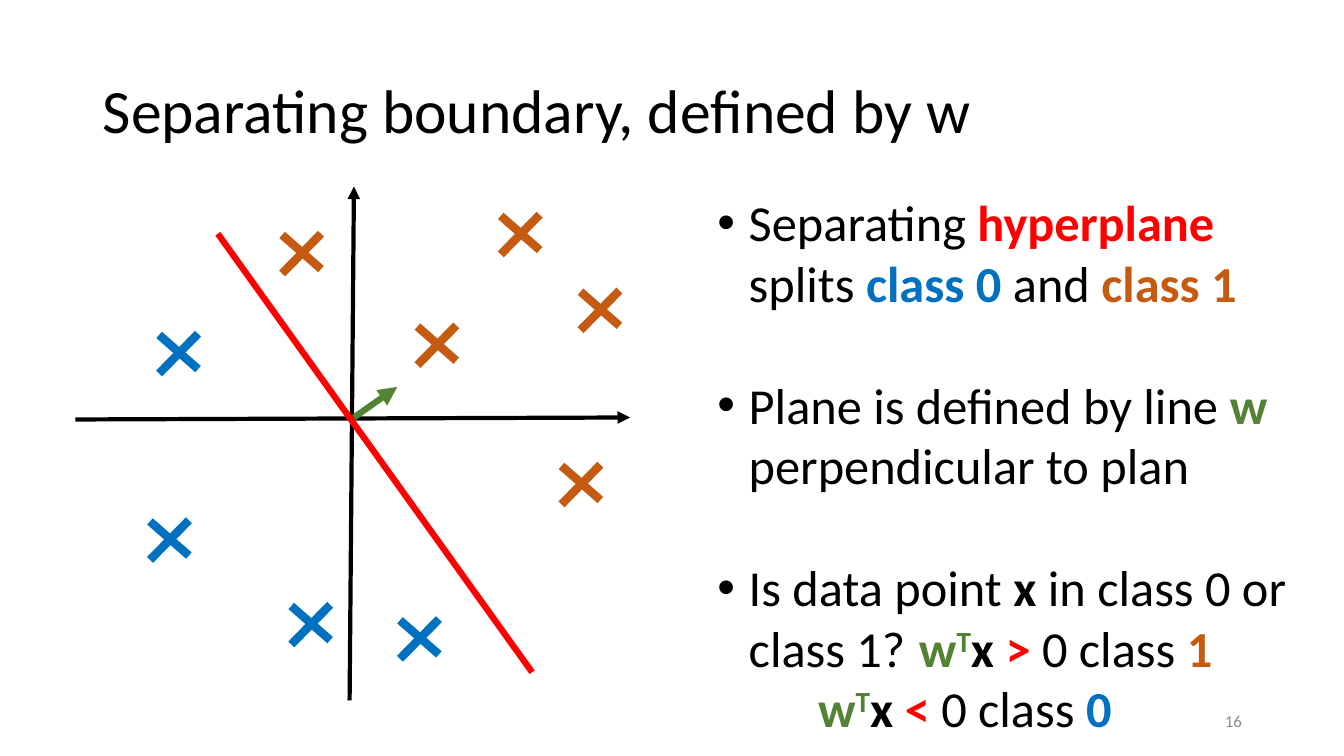
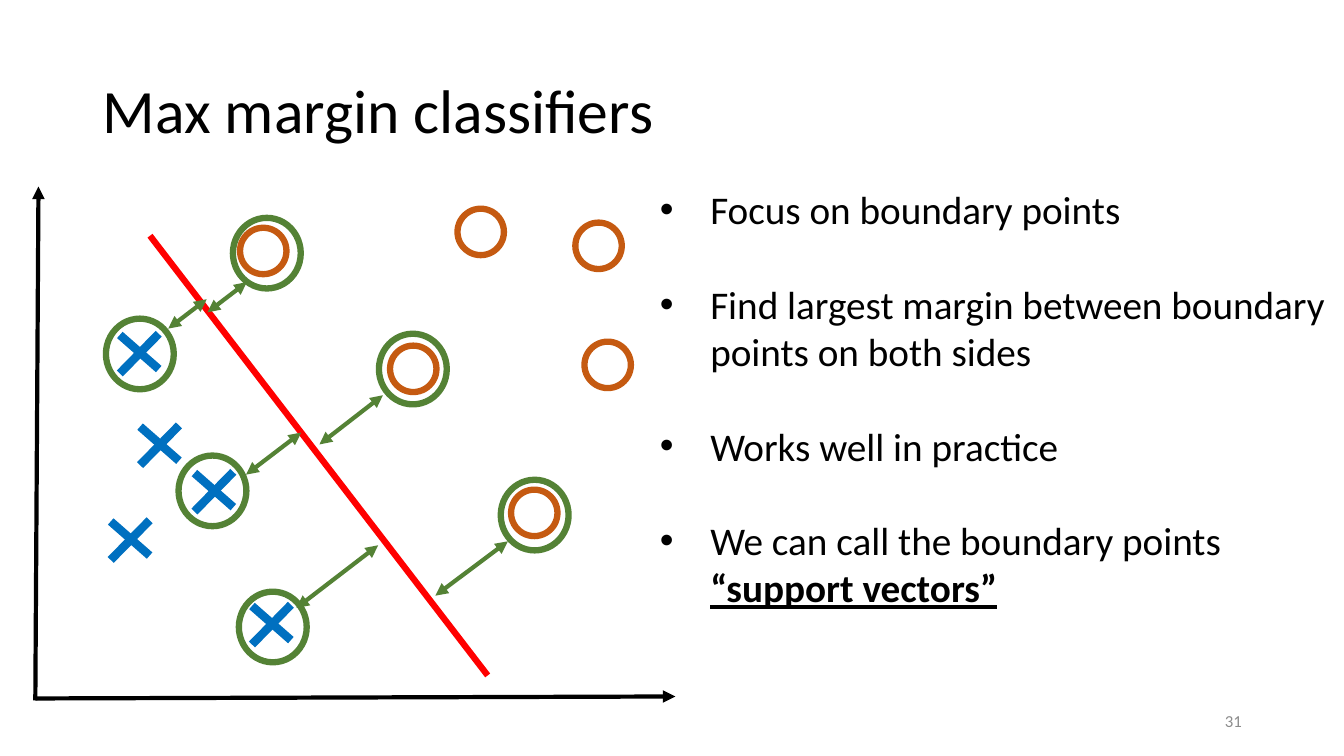
"""Build two slides on separating boundaries and max margin classifiers."""
from lxml.etree import SubElement
from pptx import Presentation
from pptx.dml.color import RGBColor
from pptx.enum.shapes import MSO_CONNECTOR as Connector, MSO_SHAPE as Shape
from pptx.enum.text import MSO_ANCHOR as Anchor, PP_ALIGN as Align
from pptx.oxml.ns import qn
from pptx.util import Cm, Pt

BLACK = RGBColor(0x00, 0x00, 0x00)
GREY = RGBColor(0x8C, 0x8C, 0x8C)
RED = RGBColor(0xFF, 0x00, 0x00)
BLUE = RGBColor(0x00, 0x70, 0xC0)
ORANGE = RGBColor(0xC5, 0x5A, 0x11)
GREEN = RGBColor(0x54, 0x82, 0x35)

FONT = "Calibri"
TITLE_BOX = (2.34, 1.02, 29.21, 3.68)
NUMBER_BOX = (23.93, 17.65, 7.62, 1.02)
HALO_SIZE = (1.71, 1.78)
RING_SIZE = (1.17, 1.17)
CROSS_STROKES = ((0, 0.03, 0.98, 0.89), (0, 1, 0.98, 0))
BREAK = "\n"
BOLD = {"bold": True}


def set_format(target, values):
    """Set each attribute of target named in values."""
    for name, value in values.items():
        setattr(target, name, value)


def add_words(paragraph, words, size, colour=BLACK, style=None, raised=False):
    """Add one run of text to a paragraph."""
    run = paragraph.add_run()
    run.text = words
    set_format(run.font, {"name": FONT, "size": Pt(size), **(style or {})})
    run.font.color.rgb = colour
    if raised:
        run.font._element.set("baseline", "30000")


def add_frame(slide, box, anchor):
    """Add a wrapping text box and return its text frame."""
    frame = slide.shapes.add_textbox(*map(Cm, box)).text_frame
    set_format(frame, {"word_wrap": True, "vertical_anchor": anchor})
    return frame


def add_label(slide, box, words, size, colour, layout):
    """Add a single paragraph centred vertically in its box."""
    paragraph = add_frame(slide, box, Anchor.MIDDLE).paragraphs[0]
    set_format(paragraph, layout)
    add_words(paragraph, words, size, colour)


def add_bullets(slide, box, points, size, indent, gap):
    """Add bulleted points, each a list of runs, with a gap between them."""
    frame = add_frame(slide, box, Anchor.TOP)
    for index, point in enumerate(points):
        paragraph = frame.add_paragraph() if index else frame.paragraphs[0]
        paragraph.space_before = Pt(gap if index else 0)
        layout = paragraph._p.get_or_add_pPr()
        layout.set("marL", str(Cm(indent)))
        layout.set("indent", str(-Cm(indent)))
        SubElement(layout, qn("a:buFont"), typeface="Arial")
        SubElement(layout, qn("a:buChar"), char="•")
        for words, *look in point:
            if words == BREAK:
                paragraph.add_line_break()
            else:
                add_words(paragraph, words, size, *look)


def add_line(shapes, ends, colour, width, arrows=()):
    """Add a straight line with arrowheads at the named ends."""
    line = shapes.add_connector(Connector.STRAIGHT, *map(Cm, ends))
    line.line.color.rgb = colour
    line.line.width = Pt(width)
    outline = line.line._get_or_add_ln()
    for end in arrows:
        SubElement(outline, qn(f"a:{end}"), type="triangle")
    SubElement(line._element.spPr, qn("a:effectLst"))


def add_crosses(slide, places, colour):
    """Mark data points with crosses, each a group of two strokes."""
    for x, y in places:
        cross = slide.shapes.add_group_shape()
        for x1, y1, x2, y2 in CROSS_STROKES:
            add_line(cross.shapes, (x + x1, y + y1, x + x2, y + y2), colour, 6)


def add_rings(slide, places, size, colour):
    """Add unfilled ellipses of one size."""
    for place in places:
        ring = slide.shapes.add_shape(Shape.OVAL, *map(Cm, place + size))
        ring.shadow.inherit = False
        ring.fill.background()
        ring.line.color.rgb = colour
        ring.line.width = Pt(4.5)


def add_plot_slide(deck, title, number, axes, boundary):
    """Add a slide with its title, number, axes and red boundary."""
    slide = deck.slides.add_slide(deck.slide_layouts[6])
    add_label(slide, TITLE_BOX, title, 44, BLACK, {"line_spacing": 0.9})
    add_label(slide, NUMBER_BOX, number, 12, GREY, {"alignment": Align.RIGHT})
    for axis in axes:
        add_line(slide.shapes, axis, BLACK, 3, ["tailEnd"])
    add_line(slide.shapes, boundary, RED, 4.5)
    return slide


def decision_rule(sign, label, colour):
    """Return the runs of one rule that assigns x to a class."""
    return [("w", GREEN, BOLD), ("T", GREEN, BOLD, True), ("x ", BLACK, BOLD),
            (sign, RED, BOLD), (" 0 class ",), (label, colour, BOLD)]


def add_boundary_slide(deck):
    """Show the hyperplane and its normal w."""
    slide = add_plot_slide(
        deck, "Separating boundary, defined by w", "16",
        [(8.81, 17.65, 8.92, 4.7), (1.9, 10.57, 15.88, 10.52)],
        (5.49, 5.89, 13.41, 16.94))
    add_crosses(slide, [(10.52, 8.2), (7.11, 5.89), (14.63, 7.32),
                        (14.15, 11.71), (12.62, 5.41)], ORANGE)
    add_crosses(slide, [(4.01, 8.41), (3.78, 13.11), (7.34, 15.24),
                        (10.08, 15.6)], BLUE)
    add_line(slide.shapes, (8.92, 10.52, 10.01, 9.75), GREEN, 4.5, ["tailEnd"])
    points = [
        [("Separating ",), ("hyperplane", RED, BOLD), (" splits ",),
         ("class 0", BLUE, BOLD), (" and ",), ("class 1", ORANGE, BOLD)],
        [("Plane is defined by line ",), ("w ", GREEN, BOLD),
         ("perpendicular to plan",)],
        [("Is data point ",), ("x", BLACK, BOLD),
         (" in class 0 or class 1?\t",), *decision_rule(">", "1", ORANGE),
         (BREAK,), ("\t\t",), *decision_rule("<", "0", BLUE)],
    ]
    add_bullets(slide, (17.83, 4.7, 14.94, 14.1), points, 36, 0.79, 44)


def add_margin_slide(deck):
    """Show the support vectors and their margins."""
    slide = add_plot_slide(
        deck, "Max margin classifiers", "31",
        [(0.89, 17.65, 0.97, 4.7), (0.89, 17.6, 17.02, 17.55)],
        (3.78, 5.94, 12.29, 17.02))
    add_crosses(slide, [(3.02, 8.41), (2.79, 13.11), (6.35, 15.24),
                        (4.9, 11.89), (3.53, 10.72)], BLUE)
    points = [
        [("Focus on boundary points",)],
        [("Find largest margin between boundary points on both sides",)],
        [("Works well in practice",)],
        [("We can call the boundary points",), (BREAK,),
         ("“support vectors”", BLACK, {"bold": True, "underline": True})],
    ]
    add_bullets(slide, (16.38, 4.55, 17.48, 11.02), points, 28, 1.27, 34)
    add_rings(slide, [(6.02, 14.91), (5.87, 5.49), (4.5, 11.48),
                      (12.62, 12.09), (9.55, 8.41), (2.67, 8.03)],
              HALO_SIZE, GREEN)
    for margin in [(4.24, 8.28, 5.21, 7.54), (7.47, 15.32, 9.53, 13.74),
                   (5.23, 7.87, 6.22, 7.11), (6.2, 11.96, 7.59, 10.9),
                   (8.05, 11.2, 9.65, 9.96), (10.97, 15.01, 12.8, 13.64)]:
        add_line(slide.shapes, margin, GREEN, 3, ["headEnd", "tailEnd"])
    add_rings(slide, [(6.05, 5.74), (9.83, 8.71), (12.88, 12.34),
                      (14.73, 8.61), (11.53, 5.26), (14.5, 5.61)],
              RING_SIZE, ORANGE)


def main():
    """Build and save the deck."""
    deck = Presentation()
    set_format(deck, {"slide_width": Cm(33.87), "slide_height": Cm(19.05)})
    add_boundary_slide(deck)
    add_margin_slide(deck)
    deck.save("out.pptx")


if __name__ == "__main__":
    main()
